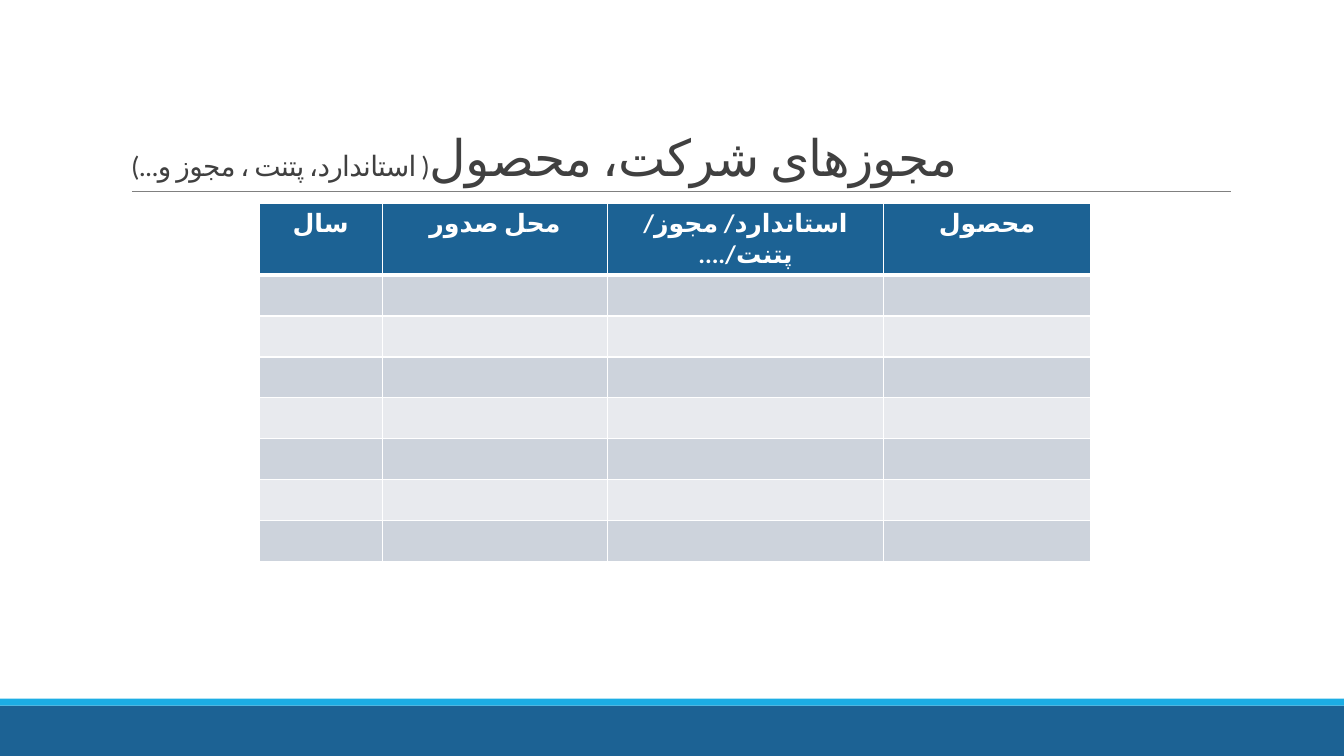
from dataclasses import dataclass

from lxml.etree import SubElement
from pptx import Presentation
from pptx.dml.color import RGBColor
from pptx.enum.shapes import MSO_CONNECTOR, MSO_SHAPE
from pptx.enum.text import MSO_ANCHOR, PP_ALIGN
from pptx.oxml.ns import qn
from pptx.util import Emu, Inches, Pt

NAVY = RGBColor(0x1C, 0x62, 0x94)
SKY = RGBColor(0x1C, 0xAD, 0xE4)
RULE_GREY = RGBColor(0x80, 0x80, 0x80)
TITLE_GREY = RGBColor(0x40, 0x40, 0x40)
BAND_DARK = RGBColor(0xCD, 0xD3, 0xDC)
BAND_LIGHT = RGBColor(0xE8, 0xEA, 0xEE)
WHITE = RGBColor(0xFF, 0xFF, 0xFF)

FONT = "Calibri"
LANGUAGE = "fa-IR"
SLIDE_W, SLIDE_H = Inches(13.33), Inches(7.5)
BODY_ROWS = 7
ROW_SHARE = 5.4


@dataclass(frozen=True)
class Bar:
    top: float
    height: float
    color: RGBColor


@dataclass(frozen=True)
class Column:
    heading: str
    width: float


@dataclass(frozen=True)
class TitlePart:
    wording: str
    size: int


FOOTER_BARS = (Bar(93.33, 6.67, NAVY), Bar(92.4, 0.93, SKY))
COLUMNS = (
    Column("سال", 9.15),
    Column("محل صدور", 16.8),
    Column("استاندارد/ مجوز/ پتنت/....", 20.48),
    Column("محصول", 15.45),
)
TITLE_PARTS = (
    TitlePart("مجوزهای شرکت، محصول", 36),
    TitlePart("( استاندارد، پتنت ، مجوز و...)", 20),
)


def across(percent: float) -> Emu:
    """Percent of the slide's width."""
    return Emu(round(SLIDE_W * percent / 100))


def down(percent: float) -> Emu:
    """Percent of the slide's height."""
    return Emu(round(SLIDE_H * percent / 100))


def draw_bar(slide, bar: Bar) -> None:
    strip = slide.shapes.add_shape(
        MSO_SHAPE.RECTANGLE, 0, down(bar.top), SLIDE_W, down(bar.height))
    strip.shadow.inherit = False
    strip.fill.solid()
    strip.fill.fore_color.rgb = bar.color
    strip.line.fill.background()


def draw_title_rule(slide) -> None:
    rule = slide.shapes.add_connector(
        MSO_CONNECTOR.STRAIGHT, across(9.82), down(25.33), across(91.6), down(25.33))
    rule.line.color.rgb = RULE_GREY
    rule.line.width = Pt(0.5)
    SubElement(rule._element.spPr, qn("a:effectLst"))


def style_font(font, size: int, color: RGBColor) -> None:
    """Set size, colour and the typeface for Latin and Persian letters."""
    font.size = Pt(size)
    font.color.rgb = color
    font.name = FONT
    SubElement(font._element, qn("a:cs"), typeface=FONT)


def write_title(slide) -> None:
    title = slide.shapes.title
    title.left, title.top = across(9), down(4.13)
    title.width, title.height = across(82.5), down(21.2)
    frame = title.text_frame
    frame.word_wrap = True
    frame.vertical_anchor = MSO_ANCHOR.BOTTOM
    heading = frame.paragraphs[0]
    heading.alignment = PP_ALIGN.LEFT
    heading.line_spacing = 0.85
    for part in TITLE_PARTS:
        run = heading.add_run()
        run.text = part.wording
        style_font(run.font, part.size, TITLE_GREY)
        run.font._element.set("spc", "-50")
        run.font._element.set("lang", LANGUAGE)


def style_cell(cell, color: RGBColor, bottom_width: float = 1) -> None:
    """Fill the cell and give it white borders."""
    cell.fill.solid()
    cell.fill.fore_color.rgb = color
    properties = cell._tc.get_or_add_tcPr()
    widths = {"a:lnL": 1, "a:lnR": 1, "a:lnT": 1, "a:lnB": bottom_width}
    for position, (edge, width) in enumerate(widths.items()):
        border = SubElement(properties, qn(edge), w=str(Pt(width)))
        paint = SubElement(border, qn("a:solidFill"))
        SubElement(paint, qn("a:srgbClr"), val=str(WHITE))
        properties.insert(position, border)


def write_heading(cell, heading: str) -> None:
    cell.text = heading
    paragraph = cell.text_frame.paragraphs[0]
    paragraph.alignment = PP_ALIGN.CENTER
    paragraph._p.get_or_add_pPr().set("rtl", "1")
    style_font(paragraph.font, 18, WHITE)
    paragraph.font.bold = True
    for run in paragraph.runs:
        run.font._element.set("lang", LANGUAGE)


def draw_permits_table(slide) -> None:
    row_count = BODY_ROWS + 1
    permits = slide.shapes.add_table(
        row_count, len(COLUMNS), across(19.28), down(26.93),
        across(sum(column.width for column in COLUMNS)),
        down(ROW_SHARE * row_count)).table
    for row in permits.rows:
        row.height = down(ROW_SHARE)
    for index, column in enumerate(COLUMNS):
        permits.columns[index].width = across(column.width)
        write_heading(permits.cell(0, index), column.heading)
        style_cell(permits.cell(0, index), NAVY, bottom_width=3)
        for row_index in range(1, row_count):
            band = BAND_DARK if row_index % 2 else BAND_LIGHT
            style_cell(permits.cell(row_index, index), band)


def main() -> None:
    deck = Presentation()
    deck.slide_width, deck.slide_height = SLIDE_W, SLIDE_H
    slide = deck.slides.add_slide(deck.slide_layouts[5])
    for bar in FOOTER_BARS:
        draw_bar(slide, bar)
    draw_title_rule(slide)
    write_title(slide)
    draw_permits_table(slide)
    deck.save("out.pptx")


if __name__ == "__main__":
    main()
